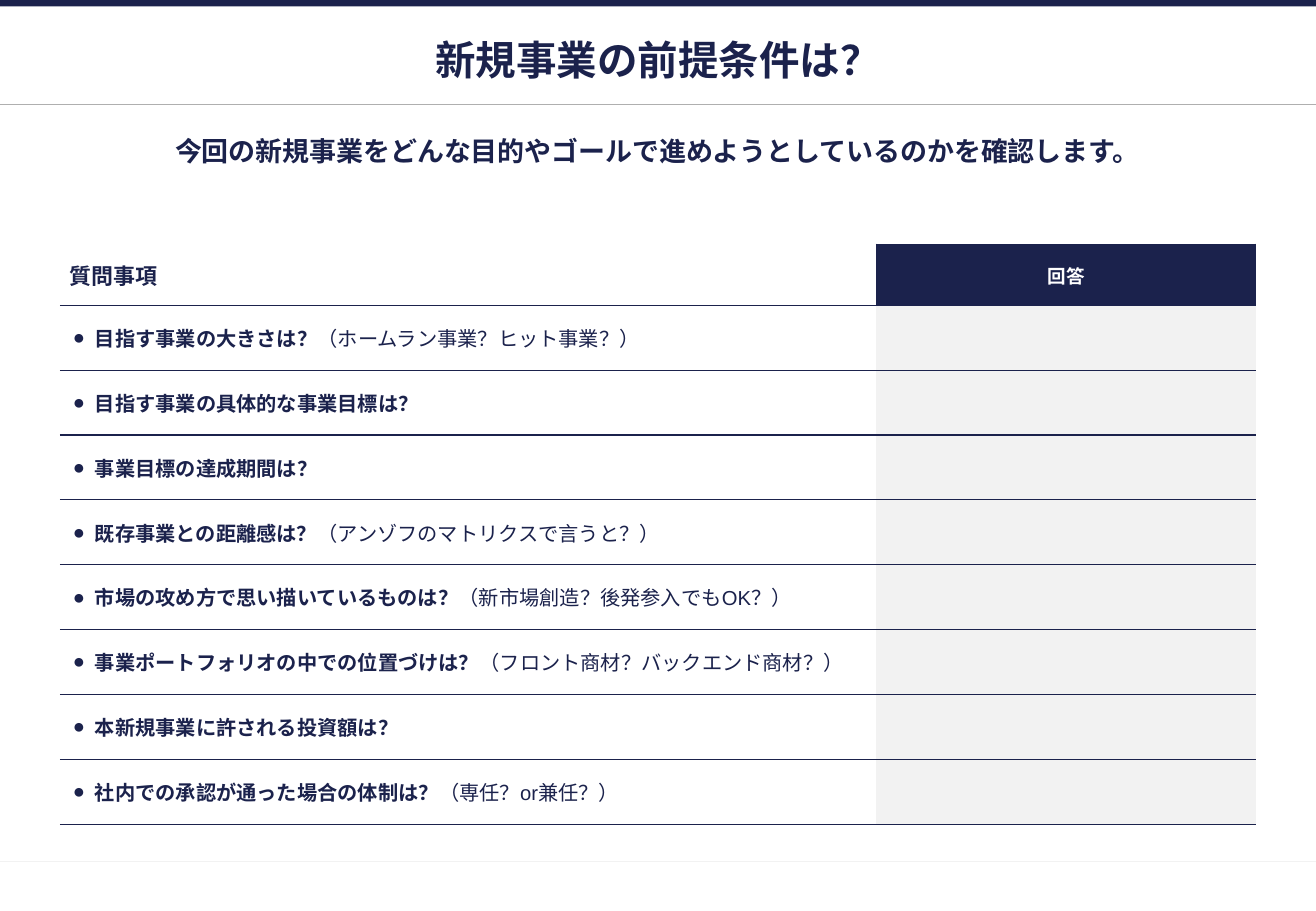
from dataclasses import dataclass

from lxml import etree
from pptx import Presentation
from pptx.dml.color import RGBColor
from pptx.enum import shapes, text
from pptx.oxml import ns
from pptx.util import Pt


@dataclass(frozen=True)
class Theme:
    font: str = "Arial"
    navy: str = "1B224C"
    white: str = "FFFFFF"
    grey: str = "AFAFAF"
    pale: str = "F2F2F2"
    title: float = 24
    lead: float = 16
    heading: float = 13
    answer: float = 11
    question: float = 12
    line: float = 0.75


@dataclass(frozen=True)
class Question:
    main: str
    hint: str = ""


@dataclass(frozen=True)
class Rule:
    y: float
    color: str


THEME = Theme()
WIDTH, HEIGHT = 780, 540
MARGIN, CONTENT_WIDTH = 36, 708
TABLE_LEFT, TABLE_TOP = 35.5, 144.8
COLUMN_WIDTHS = (484, 224.8)
HEADER_HEIGHT, ROW_HEIGHT = 36.2, 38.45

RULES = [Rule(510.6, THEME.pale), Rule(62, THEME.grey)]
QUESTIONS = [
    Question("目指す事業の大きさは？", "（ホームラン事業？ヒット事業？）"),
    Question("目指す事業の具体的な事業目標は？"),
    Question("事業目標の達成期間は？"),
    Question("既存事業との距離感は？", "（アンゾフのマトリクスで言うと？）"),
    Question("市場の攻め方で思い描いているものは？", "（新市場創造？後発参入でもOK？）"),
    Question("事業ポートフォリオの中での位置づけは？", "（フロント商材？バックエンド商材？）"),
    Question("本新規事業に許される投資額は？"),
    Question("社内での承認が通った場合の体制は？", "（専任？or兼任？）"),
]


def rgb(color: str) -> RGBColor:
    return RGBColor.from_string(color)


def add_run(paragraph, words: str, size: float, color: str = THEME.navy, bold: bool = True) -> None:
    run = paragraph.add_run()
    run.text = words
    run.font.name, run.font.size, run.font.bold = THEME.font, Pt(size), bold
    run.font.color.rgb = rgb(color)


def add_rule(slide, rule: Rule) -> None:
    line = slide.shapes.add_connector(
        shapes.MSO_CONNECTOR.STRAIGHT, Pt(0), Pt(rule.y), Pt(WIDTH), Pt(rule.y))
    line.line.color.rgb = rgb(rule.color)
    line.line.width = Pt(THEME.line)
    etree.SubElement(line._element.spPr, ns.qn("a:effectLst"))


def write_heading(shape, words: str, size: float, anchor) -> None:
    frame = shape.text_frame
    frame.word_wrap = True
    frame.auto_size = text.MSO_AUTO_SIZE.NONE
    frame.vertical_anchor = anchor
    frame.margin_left = frame.margin_right = frame.margin_top = frame.margin_bottom = Pt(3)
    paragraph = frame.paragraphs[0]
    paragraph.alignment = text.PP_ALIGN.CENTER
    add_run(paragraph, words, size)


def set_borders(cell, sides: str) -> None:
    """Draw the named sides (any of L, R, T, B) and clear the others."""
    properties = cell._tc.get_or_add_tcPr()
    for index, side in enumerate("LRTB"):
        border = etree.Element(ns.qn(f"a:ln{side}"), w=str(Pt(THEME.line)))
        if side in sides:
            solid = etree.SubElement(border, ns.qn("a:solidFill"))
            etree.SubElement(solid, ns.qn("a:srgbClr"), val=THEME.navy)
        else:
            etree.SubElement(border, ns.qn("a:noFill"))
        properties.insert(index, border)


def format_cell(cell, fill: str, sides: str, side_margin: float, end_margin: float):
    """Style a cell and return its first paragraph."""
    cell.fill.solid()
    cell.fill.fore_color.rgb = rgb(fill)
    set_borders(cell, sides)
    cell.vertical_anchor = text.MSO_ANCHOR.MIDDLE
    cell.margin_left = cell.margin_right = Pt(side_margin)
    cell.margin_top = cell.margin_bottom = Pt(end_margin)
    return cell.text_frame.paragraphs[0]


def add_bullet(paragraph) -> None:
    properties = paragraph._p.get_or_add_pPr()
    properties.set("marL", str(Pt(15)))
    properties.set("indent", str(Pt(-13)))
    color = etree.SubElement(properties, ns.qn("a:buClr"))
    etree.SubElement(color, ns.qn("a:srgbClr"), val=THEME.navy)
    etree.SubElement(properties, ns.qn("a:buFont"), typeface=THEME.font)
    etree.SubElement(properties, ns.qn("a:buChar"), char="●")


def add_question_table(slide) -> None:
    table = slide.shapes.add_table(
        len(QUESTIONS) + 1, 2, Pt(TABLE_LEFT), Pt(TABLE_TOP), Pt(sum(COLUMN_WIDTHS)),
        Pt(HEADER_HEIGHT + ROW_HEIGHT * len(QUESTIONS))).table
    table.first_row = table.horz_banding = False
    for column, width in zip(table.columns, COLUMN_WIDTHS):
        column.width = Pt(width)

    # Header row
    table.rows[0].height = Pt(HEADER_HEIGHT)
    heading = format_cell(table.cell(0, 0), THEME.white, "RB", 5.8, 8.5)
    add_run(heading, "質問事項", THEME.heading)
    answer = format_cell(table.cell(0, 1), THEME.navy, "LRTB", 3, 8.5)
    answer.alignment = text.PP_ALIGN.CENTER
    add_run(answer, "回答", THEME.answer, THEME.white)

    # Question rows
    for row, question in enumerate(QUESTIONS, start=1):
        table.rows[row].height = Pt(ROW_HEIGHT)
        line = format_cell(table.cell(row, 0), THEME.white, "TB", 5.8, 5.8)
        add_bullet(line)
        add_run(line, question.main, THEME.question)
        if question.hint:
            add_run(line, question.hint, THEME.question, bold=False)
        blank = format_cell(table.cell(row, 1), THEME.pale, "TB", 5.8, 5.8)
        blank.font.size = Pt(THEME.question)


def main() -> None:
    deck = Presentation()
    deck.slide_width, deck.slide_height = Pt(WIDTH), Pt(HEIGHT)
    slide = deck.slides.add_slide(deck.slide_layouts[5])

    # Frame: top band and horizontal rules
    band = slide.shapes.add_shape(
        shapes.MSO_SHAPE.RECTANGLE, Pt(0), Pt(0), Pt(WIDTH), Pt(3.8))
    band.shadow.inherit = False
    band.fill.solid()
    band.fill.fore_color.rgb = rgb(THEME.navy)
    band.line.fill.background()
    for rule in RULES:
        add_rule(slide, rule)

    # Title and lead sentence
    title = slide.shapes.title
    title.left, title.top = Pt(MARGIN), Pt(21)
    title.width, title.height = Pt(CONTENT_WIDTH), Pt(28)
    write_heading(title, "新規事業の前提条件は？", THEME.title, text.MSO_ANCHOR.MIDDLE)
    lead = slide.shapes.add_textbox(Pt(MARGIN), Pt(77), Pt(CONTENT_WIDTH), Pt(54))
    write_heading(lead, "今回の新規事業をどんな目的やゴールで進めようとしているのかを確認します。",
                  THEME.lead, text.MSO_ANCHOR.TOP)

    add_question_table(slide)
    deck.save("out.pptx")


if __name__ == "__main__":
    main()
